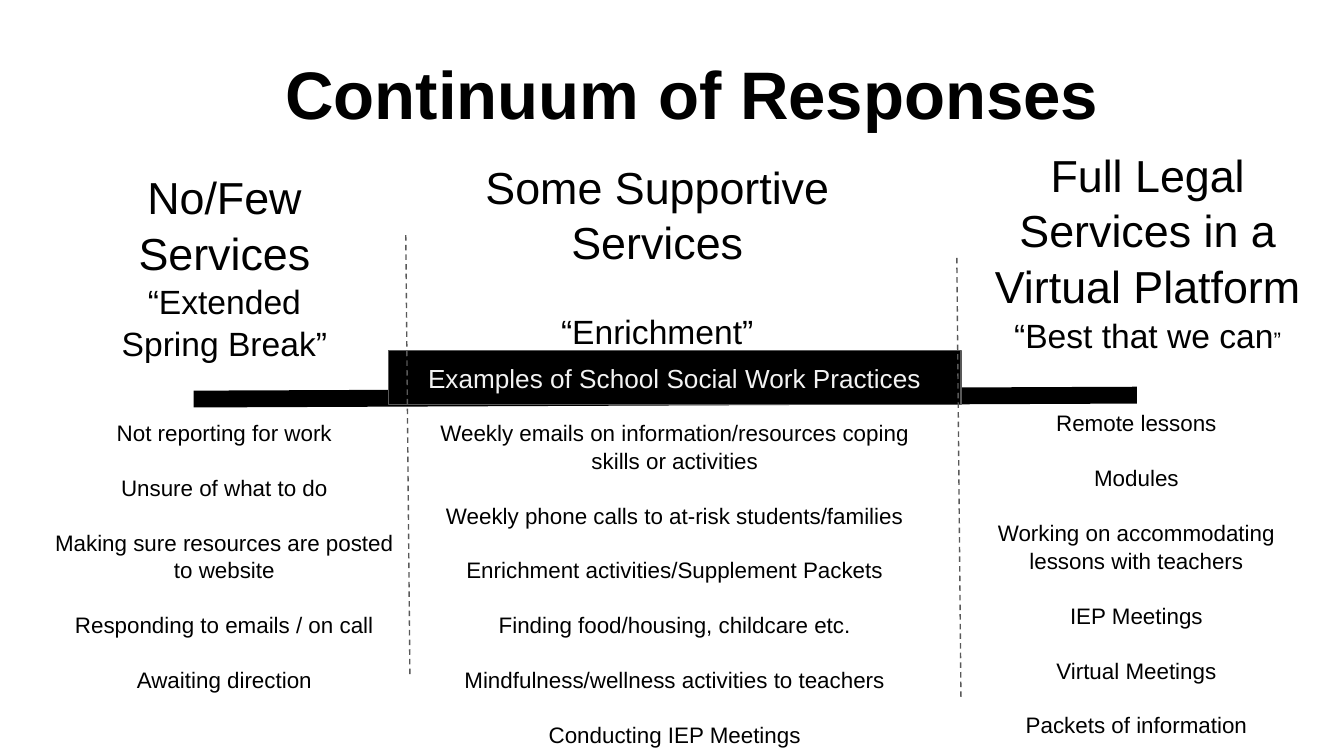
from lxml.etree import SubElement
from pptx import Presentation
from pptx.dml.color import RGBColor as RGB
from pptx.enum.dml import MSO_LINE_DASH_STYLE as DASH
from pptx.enum.shapes import MSO_CONNECTOR as CONN, MSO_SHAPE as SHAPE
from pptx.enum.text import MSO_ANCHOR as ANCHOR, PP_ALIGN as ALIGN
from pptx.oxml.ns import qn
from pptx.util import Pt

BLACK = RGB(0x00, 0x00, 0x00)
GREY = RGB(0x59, 0x59, 0x59)
PALE = RGB(0xF3, 0xF3, 0xF3)
FONT = "Arial"
PAD = 7.2       # inner margin of every text frame
LEAD = 1.04     # line spacing of headings and lists

# Heading box, heading, (motto runs with sizes), gap, list box, practices
COLS = [
    ((54, 82.8, 132.5, 67.7), "No/Few Services",
     [("“Extended Spring Break”", 18)], 0,
     (18.7, 216.7, 203, 144.7),
     ["Not reporting for work", "Unsure of what to do",
      "Making sure resources are posted to website",
      "Responding to emails / on call", "Awaiting direction"]),
    ((250.6, 77, 203, 67.7), "Some Supportive Services",
     [("“Enrichment”", 18)], 21.5,
     (221.8, 216.7, 279.4, 175.7),
     ["Weekly emails on information/resources coping skills or activities",
      "Weekly phone calls to at-risk students/families",
      "Enrichment activities/Supplement Packets",
      "Finding food/housing, childcare etc.",
      "Mindfulness/wellness activities to teachers",
      "Conducting IEP Meetings"]),
    ((523.4, 70.6, 182.9, 67.7), "Full Legal Services in a Virtual Platform",
     [("“Best that we can", 18), ("”", 12)], 0,
     (517, 211.7, 183.6, 187.2),
     ["Remote lessons", "Modules",
      "Working on accommodating lessons with teachers",
      "IEP Meetings", "Virtual Meetings", "Packets of information"]),
]


def style(run, size, color=BLACK, bold=False):
    font = run.font
    font.name, font.size, font.bold = FONT, Pt(size), bold
    font.color.rgb = color


def setup(frame, anchor=ANCHOR.TOP):
    frame.word_wrap = True
    frame.vertical_anchor = anchor
    frame.margin_left = frame.margin_right = Pt(PAD)
    frame.margin_top = frame.margin_bottom = Pt(PAD)


def write(frame, paras, gap=0, lead=LEAD, color=BLACK, bold=False):
    """Fill a frame with centred paragraphs, each a list of (text, size)."""
    for i, runs in enumerate(paras):
        para = frame.add_paragraph() if i else frame.paragraphs[0]
        para.alignment = ALIGN.CENTER
        para.line_spacing = lead
        para.space_before = Pt(gap if i else 0)
        for text, size in runs:
            run = para.add_run()
            run.text = text
            style(run, size, color, bold)


def label(slide, box, paras, gap=0):
    frame = slide.shapes.add_textbox(*map(Pt, box)).text_frame
    setup(frame)
    write(frame, paras, gap)


def rule(slide, start, end, color, width, dash=None):
    line = slide.shapes.add_connector(CONN.STRAIGHT, *map(Pt, start + end))
    line.line.color.rgb = color
    line.line.width = Pt(width)
    if dash:
        line.line.dash_style = dash
    SubElement(line._element.spPr, qn("a:effectLst"))


def title(slide, box):
    frame = slide.shapes.add_textbox(*map(Pt, box)).text_frame
    setup(frame, ANCHOR.MIDDLE)
    write(frame, [[("Continuum of Responses", 36)]], lead=1, bold=True)


def column(slide, head, name, motto, gap, box, items):
    label(slide, head, [[(name, 24)], motto], gap)
    label(slide, box, [[(item, 12)] for item in items], gap=14.4)


def banner(slide, box):
    rect = slide.shapes.add_shape(SHAPE.RECTANGLE, *map(Pt, box))
    rect.shadow.inherit = False
    rect.fill.solid()
    rect.fill.fore_color.rgb = BLACK
    rect.line.color.rgb = GREY
    rect.line.width = Pt(0.75)
    setup(rect.text_frame, ANCHOR.MIDDLE)
    write(rect.text_frame, [[("Examples of School Social Work Practices", 14)]],
          lead=1, color=PALE)


def main():
    deck = Presentation()
    deck.slide_width, deck.slide_height = Pt(720), Pt(405)
    slide = deck.slides.add_slide(deck.slide_layouts[6])

    title(slide, (35.3, 16.6, 671, 66.2))
    # Continuum bar behind the columns
    rule(slide, (103.7, 213.8), (609.1, 211.7), BLACK, 9)
    for col in COLS:
        column(slide, *col)
    banner(slide, (208.1, 187.9, 306.7, 28.8))
    # Slightly slanted dividers between the columns
    for x, y in ((217.4, 126), (512.6, 138.2)):
        rule(slide, (x, y), (x + 2.2, y + 236.2), GREY, 0.75, DASH.DASH)

    deck.save("out.pptx")


if __name__ == "__main__":
    main()
